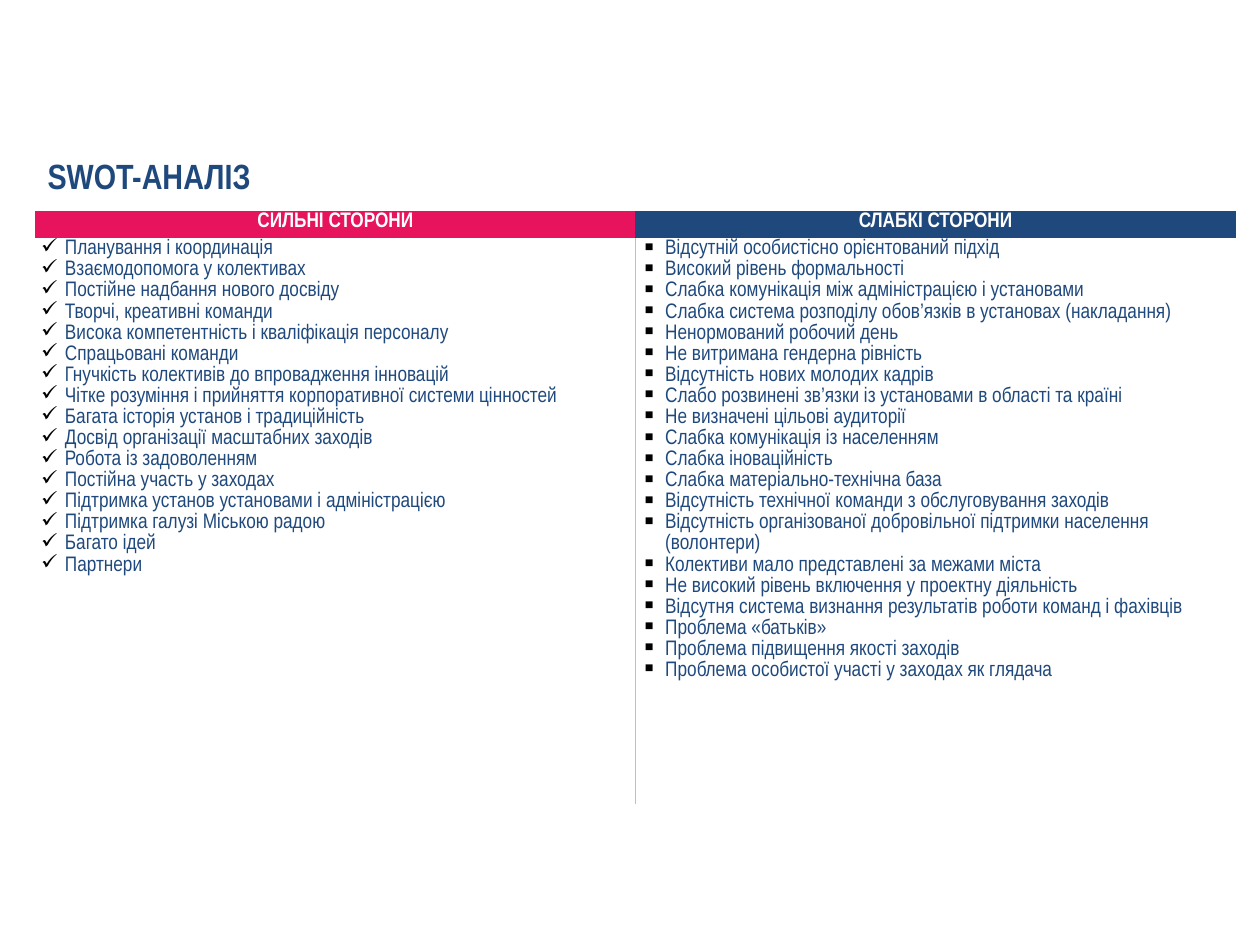
from lxml import etree
from pptx import Presentation
from pptx.dml.color import RGBColor
from pptx.enum.text import MSO_ANCHOR, MSO_AUTO_SIZE, PP_ALIGN
from pptx.oxml.ns import qn
from pptx.util import Cm, Pt

LEFT, CENTER = PP_ALIGN.LEFT, PP_ALIGN.CENTER
BOTTOM = MSO_ANCHOR.BOTTOM
FIXED = MSO_AUTO_SIZE.NONE
NAVY = RGBColor(0x1F, 0x49, 0x7D)
PINK = RGBColor(0xE7, 0x13, 0x5C)
WHITE = RGBColor(0xFF, 0xFF, 0xFF)
BLACK = RGBColor(0x00, 0x00, 0x00)
GREY = RGBColor(0xBF, 0xBF, 0xBF)
NO_STYLE = "{2D5ABB26-0587-4C30-8999-92F81FD0307C}"

TITLE = "SWOT-АНАЛІЗ"
COLUMNS = [
    {
        "heading": "СИЛЬНІ СТОРОНИ", "color": PINK, "bullet": "✓", "border": "a:lnR",
        "items": [
            "Планування і координація",
            "Взаємодопомога у колективах",
            "Постійне надбання нового досвіду",
            "Творчі, креативні команди",
            "Висока компетентність і кваліфікація персоналу",
            "Спрацьовані команди",
            "Гнучкість колективів до впровадження інновацій",
            "Чітке розуміння і прийняття корпоративної системи цінностей",
            "Багата історія установ і традиційність",
            "Досвід організації масштабних заходів",
            "Робота із задоволенням",
            "Постійна участь у заходах",
            "Підтримка установ установами і адміністрацією",
            "Підтримка галузі Міською радою",
            "Багато ідей",
            "Партнери",
        ],
    },
    {
        "heading": "СЛАБКІ СТОРОНИ", "color": NAVY, "bullet": "▪", "border": "a:lnL",
        "items": [
            "Відсутній особистісно орієнтований підхід",
            "Високий рівень формальності",
            "Слабка комунікація між адміністрацією і установами",
            "Слабка система розподілу обов’язків в установах (накладання)",
            "Ненормований робочий день",
            "Не витримана гендерна рівність",
            "Відсутність нових молодих кадрів",
            "Слабо розвинені зв’язки із установами в області та країні",
            "Не визначені цільові аудиторії",
            "Слабка комунікація із населенням",
            "Слабка іноваційність",
            "Слабка матеріально-технічна база",
            "Відсутність технічної команди з обслуговування заходів",
            "Відсутність організованої добровільної підтримки населення (волонтери)",
            "Колективи мало представлені за межами міста",
            "Не високий рівень включення у проектну діяльність",
            "Відсутня система визнання результатів роботи команд і фахівців",
            "Проблема «батьків»",
            "Проблема підвищення якості заходів",
            "Проблема особистої участі у заходах як глядача",
        ],
    },
]

TABLE_LEFT, TABLE_TOP = Cm(0.71), Cm(4.26)
COLUMN_WIDTH = Cm(12.1)
ROW_HEIGHTS = [Cm(0.54), Cm(11.41)]
INDENT = Cm(0.48)
TITLE_FRAME = {"left": TABLE_LEFT, "top": Cm(2.9), "width": Cm(4.67), "height": Cm(1.12)}
TITLE_TEXT = {"auto_size": FIXED, "word_wrap": False, "vertical_anchor": BOTTOM,
              "margin_left": Cm(0.25), "margin_right": Cm(0.25), "margin_bottom": Cm(0.05)}
CELL_MARGINS = {"margin_left": Cm(0.12), "margin_right": Cm(0.12),
                "margin_top": 0, "margin_bottom": 0}
TITLE_FONT = {"name": "Arial Narrow", "size": Pt(20), "bold": True}
HEADING_FONT = {**TITLE_FONT, "size": Pt(12)}
ITEM_FONT = {**HEADING_FONT, "bold": False}


def apply(target, values):
    for name, value in values.items():
        setattr(target, name, value)


def write(para, text, font, color, alignment=LEFT):
    apply(para, {"alignment": alignment, "line_spacing": 1.07, "space_before": Pt(0)})
    span = para.add_run()
    span.text = text
    apply(span.font, font)
    span.font.color.rgb = color


def add_color(parent, color):
    etree.SubElement(parent, qn("a:srgbClr"), val=str(color))


def add_bullet(para, symbol):
    properties = para._p.get_or_add_pPr()
    properties.set("marL", str(INDENT))
    properties.set("indent", str(-INDENT))
    add_color(etree.SubElement(properties, qn("a:buClr")), BLACK)
    etree.SubElement(properties, qn("a:buChar"), char=symbol)


def add_border(cell, side):
    line = etree.Element(qn(side), w=str(Pt(1)))
    add_color(etree.SubElement(line, qn("a:solidFill")), GREY)
    cell._tc.get_or_add_tcPr().insert(0, line)


deck = Presentation()
apply(deck, {"slide_width": Cm(25.4), "slide_height": Cm(19.05)})
page = deck.slides.add_slide(deck.slide_layouts[5])

title = page.shapes.title
apply(title, TITLE_FRAME)
apply(title.text_frame, TITLE_TEXT)
write(title.text_frame.paragraphs[0], TITLE, TITLE_FONT, NAVY)

table = page.shapes.add_table(len(ROW_HEIGHTS), len(COLUMNS), TABLE_LEFT, TABLE_TOP,
                              COLUMN_WIDTH * len(COLUMNS), sum(ROW_HEIGHTS)).table
apply(table, {"first_row": False, "horz_banding": False})
table._tbl.tblPr.find(qn("a:tableStyleId")).text = NO_STYLE
for row, height in zip(table.rows, ROW_HEIGHTS):
    row.height = height

for index, column in enumerate(COLUMNS):
    table.columns[index].width = COLUMN_WIDTH
    heading, body = table.cell(0, index), table.cell(1, index)
    for cell in (heading, body):
        apply(cell, CELL_MARGINS)

    heading.fill.solid()
    heading.fill.fore_color.rgb = column["color"]
    write(heading.text_frame.paragraphs[0], column["heading"], HEADING_FONT, WHITE, CENTER)

    body.fill.background()
    add_border(body, column["border"])
    frame = body.text_frame
    for number, item in enumerate(column["items"]):
        para = frame.add_paragraph() if number else frame.paragraphs[0]
        add_bullet(para, column["bullet"])
        write(para, item, ITEM_FONT, NAVY)

deck.save("out.pptx")
